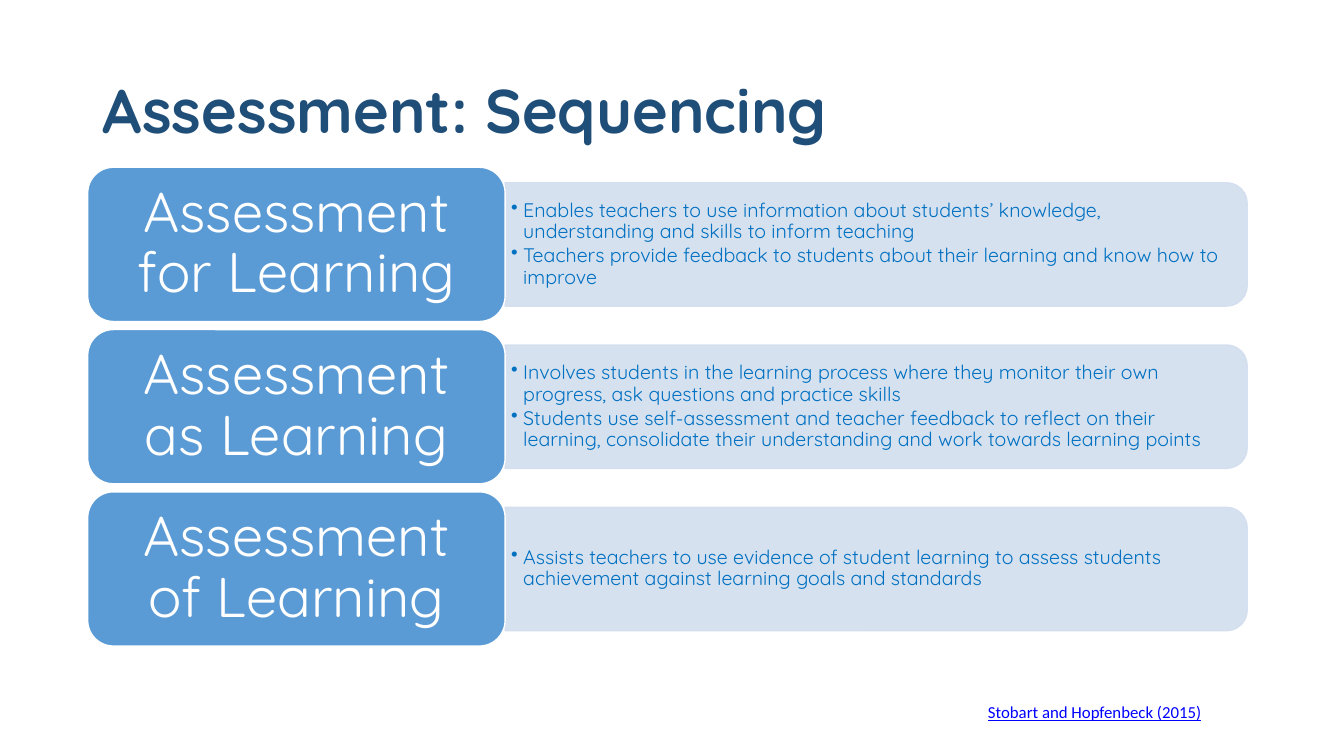
from dataclasses import dataclass

from lxml.etree import SubElement
from pptx import Presentation
from pptx.dml.color import RGBColor
from pptx.enum.shapes import MSO_SHAPE as Shape
from pptx.enum.text import MSO_ANCHOR as Anchor, MSO_AUTO_SIZE as AutoSize, PP_ALIGN as Align
from pptx.oxml.ns import qn
from pptx.util import Inches, Pt


@dataclass(frozen=True)
class Theme:
    font: str = "Quicksand"
    source_font: str = "Calibri"
    title: str = "1F4E79"
    label: str = "5B9BD5"
    panel: str = "D2DEEF"
    detail: str = "0070C0"
    white: str = "FFFFFF"
    link: str = "0000FF"
    title_size: int = 44
    label_size: int = 40
    detail_size: int = 14
    source_size: int = 12


THEME = Theme()

STAGES = [
    ("Assessment for Learning", [
        "Enables teachers to use information about students’ knowledge, "
        "understanding and skills to inform teaching",
        "Teachers provide feedback to students about their learning and know how to improve",
    ]),
    ("Assessment as Learning", [
        "Involves students in the learning process where they monitor their own "
        "progress, ask questions and practice skills",
        "Students use self-assessment and teacher feedback to reflect on their "
        "learning, consolidate their understanding and work towards learning points",
    ]),
    ("Assessment of Learning", [
        "Assists teachers to use evidence of student learning to assess students "
        "achievement against learning goals and standards",
    ]),
]


def style(para, size, color, font=THEME.font, spacing=0.9):
    para.line_spacing = spacing
    para.font.name = font
    para.font.size = Pt(size)
    para.font.color.rgb = RGBColor.from_string(color)


def set_frame(frame, side, edge):
    frame.word_wrap = True
    frame.auto_size = AutoSize.NONE
    frame.vertical_anchor = Anchor.MIDDLE
    frame.margin_left = frame.margin_right = Inches(side)
    frame.margin_top = frame.margin_bottom = Inches(edge)


def add_block(page, kind, left, top, width, height, fill, line):
    block = page.shapes.add_shape(kind, *map(Inches, (left, top, width, height)))
    block.shadow.inherit = False
    block.fill.solid()
    block.fill.fore_color.rgb = RGBColor.from_string(fill)
    block.line.color.rgb = RGBColor.from_string(line)
    block.line.width = Pt(1)
    return block


def add_bullet(para):
    properties = para._p.get_or_add_pPr()
    properties.set("marL", str(Inches(0.12)))
    properties.set("indent", str(-Inches(0.12)))
    SubElement(properties, qn("a:buChar"), char="•")


def add_title(page, left, top, width, height):
    title = page.shapes.title
    title.left, title.top, title.width, title.height = map(Inches, (left, top, width, height))
    set_frame(title.text_frame, 0.1, 0.05)
    title.text_frame.text = "Assessment: Sequencing"
    para = title.text_frame.paragraphs[0]
    para.alignment = Align.LEFT
    style(para, THEME.title_size, THEME.title)
    para.font.bold = True


def add_panel(page, left, top, width, height):
    panel = add_block(page, Shape.ROUND_2_SAME_RECTANGLE,
                      left + (width - height) / 2, top + (height - width) / 2,
                      height, width, THEME.panel, THEME.panel)
    panel.rotation = 90
    for color in panel._element.spPr.iter(qn("a:srgbClr")):
        SubElement(color, qn("a:alpha"), val="90000")


def add_details(page, details, left, top, width, height):
    box = page.shapes.add_textbox(*map(Inches, (left, top, width, height)))
    frame = box.text_frame
    set_frame(frame, 0.06, 0.03)
    for index, detail in enumerate(details):
        para = frame.add_paragraph() if index else frame.paragraphs[0]
        para.text = detail
        add_bullet(para)
        style(para, THEME.detail_size, THEME.detail)
        para.space_after = Pt(0.15 * THEME.detail_size)


def add_label(page, label, left, top, width, height):
    block = add_block(page, Shape.ROUNDED_RECTANGLE, left, top, width, height,
                      THEME.label, THEME.white)
    set_frame(block.text_frame, 0.17, 0.08)
    para = block.text_frame.paragraphs[0]
    para.text = label
    para.alignment = Align.CENTER
    style(para, THEME.label_size, THEME.white)


def add_stage(page, label, details, left, top, width, height):
    label_width = 0.36 * width
    panel_left, panel_width = left + label_width, width - label_width
    panel_height = 0.8 * height
    add_panel(page, panel_left, top + (height - panel_height) / 2, panel_width, panel_height)
    add_details(page, details, panel_left, top + 0.21, panel_width - 0.06, height - 0.42)
    add_label(page, label, left, top, label_width, height)


def add_stages(page, left, top, width, height, gap=0.08):
    row_height = (height - gap * (len(STAGES) - 1)) / len(STAGES)
    for index, (label, details) in enumerate(STAGES):
        row_top = top + index * (row_height + gap)
        add_stage(page, label, details, left, row_top, width, row_height)


def add_source(page, left, top, width, height):
    box = page.shapes.add_textbox(*map(Inches, (left, top, width, height)))
    box.text_frame.word_wrap = True
    box.text_frame.auto_size = AutoSize.SHAPE_TO_FIT_TEXT
    para = box.text_frame.paragraphs[0]
    para.text = "Stobart and Hopfenbeck (2015)"
    style(para, THEME.source_size, THEME.link, THEME.source_font, 1.07)
    para.space_after = Pt(8)
    para.font.underline = True


def main():
    deck = Presentation()
    deck.slide_width, deck.slide_height = Inches(13.33), Inches(7.5)
    page = deck.slides.add_slide(deck.slide_layouts[5])
    add_title(page, 0.92, 0.4, 11.5, 1.45)
    add_stages(page, 0.87, 1.66, 11.5, 4.75)
    add_source(page, 9.7, 6.9, 3.35, 0.31)
    deck.save("out.pptx")


if __name__ == "__main__":
    main()
